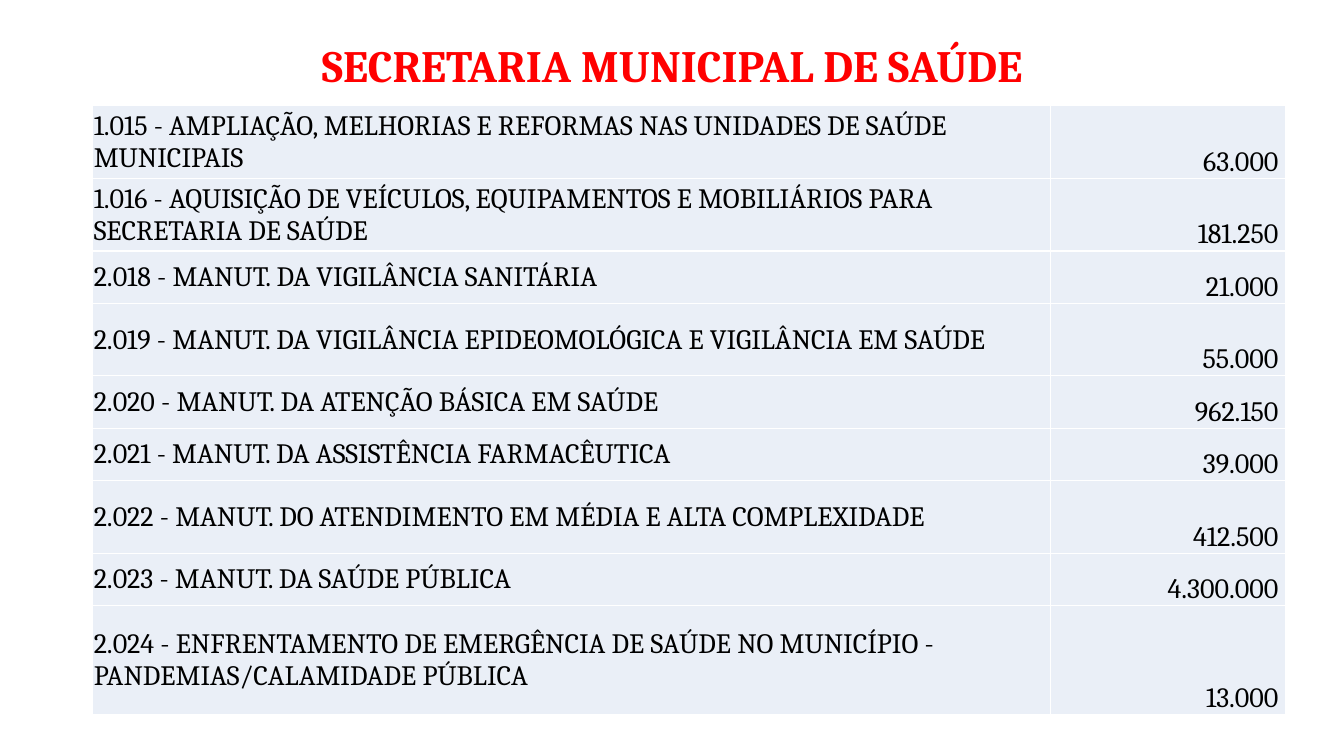
from dataclasses import dataclass

from lxml import etree
from pptx import Presentation
from pptx.dml.color import RGBColor
from pptx.enum.text import MSO_ANCHOR, PP_ALIGN
from pptx.oxml.ns import qn
from pptx.util import Inches, Pt

LEFT, CENTER, RIGHT = PP_ALIGN.LEFT, PP_ALIGN.CENTER, PP_ALIGN.RIGHT
MIDDLE, BOTTOM = MSO_ANCHOR.MIDDLE, MSO_ANCHOR.BOTTOM

TITLE = "SECRETARIA MUNICIPAL DE SAÚDE"
WIDTHS = (9.5, 2.33)
SHORT, TALL, LAST = 0.52, 0.72, 1.08
BUDGET = [
    ("1.015 - AMPLIAÇÃO, MELHORIAS E REFORMAS NAS UNIDADES DE SAÚDE MUNICIPAIS", "63.000", TALL),
    ("1.016 - AQUISIÇÃO DE VEÍCULOS, EQUIPAMENTOS E MOBILIÁRIOS PARA SECRETARIA DE SAÚDE", "181.250", TALL),
    ("2.018 - MANUT. DA VIGILÂNCIA SANITÁRIA", "21.000", SHORT),
    ("2.019 - MANUT. DA VIGILÂNCIA EPIDEOMOLÓGICA E VIGILÂNCIA EM SAÚDE", "55.000", TALL),
    ("2.020 - MANUT. DA ATENÇÃO BÁSICA EM SAÚDE", "962.150", SHORT),
    ("2.021 - MANUT. DA ASSISTÊNCIA FARMACÊUTICA", "39.000", SHORT),
    ("2.022 - MANUT. DO ATENDIMENTO EM MÉDIA E ALTA COMPLEXIDADE", "412.500", TALL),
    ("2.023 - MANUT. DA SAÚDE PÚBLICA", "4.300.000", SHORT),
    ("2.024 - ENFRENTAMENTO DE EMERGÊNCIA DE SAÚDE NO MUNICÍPIO - PANDEMIAS/CALAMIDADE PÚBLICA", "13.000", LAST),
]


@dataclass
class Theme:
    font: str = "Cambria"
    title: str = "FF0000"
    text: str = "000000"
    fill: str = "EAEFF7"
    rule: str = "FFFFFF"
    large: int = 32
    body: int = 20


class Deck:
    def __init__(self, theme, slide):
        self.theme = theme
        self.slide = slide

    def style(self, frame, size, color, align, bold=False):
        for para in frame.paragraphs:
            para.alignment = align
            for run in para.runs:
                run.font.name = self.theme.font
                run.font.size = Pt(size)
                run.font.bold = bold
                run.font.color.rgb = RGBColor.from_string(color)

    def title(self, text, left, top, width, height):
        box = self.slide.shapes.add_textbox(
            Inches(left), Inches(top), Inches(width), Inches(height))
        frame = box.text_frame
        frame.word_wrap = True
        frame.vertical_anchor = MIDDLE
        frame.text = text
        frame.paragraphs[0].line_spacing = 0.9
        self.style(frame, self.theme.large, self.theme.title, CENTER, True)

    def border(self, cell):
        props = cell._tc.get_or_add_tcPr()
        for side in ("lnL", "lnR", "lnT", "lnB"):
            line = etree.SubElement(props, qn(f"a:{side}"), w=str(Pt(1)))
            fill = etree.SubElement(line, qn("a:solidFill"))
            etree.SubElement(fill, qn("a:srgbClr"), val=self.theme.rule)

    def cell(self, cell, text, align, anchor, right):
        cell.text_frame.text = text
        cell.vertical_anchor = anchor
        cell.margin_left = cell.margin_top = Inches(0.01)
        cell.margin_right = Inches(right)
        cell.margin_bottom = 0
        self.border(cell)
        cell.fill.solid()
        cell.fill.fore_color.rgb = RGBColor.from_string(self.theme.fill)
        self.style(cell.text_frame, self.theme.body, self.theme.text, align)

    def table(self, rows, widths, left, top):
        height = sum(row[2] for row in rows)
        table = self.slide.shapes.add_table(
            len(rows), len(widths), Inches(left), Inches(top),
            Inches(sum(widths)), Inches(height)).table
        table.first_row = table.horz_banding = False
        for column, width in zip(table.columns, widths):
            column.width = Inches(width)
        for index, (label, value, height) in enumerate(rows):
            table.rows[index].height = Inches(height)
            self.cell(table.cell(index, 0), label, LEFT, MIDDLE, 0.01)
            self.cell(table.cell(index, 1), value, RIGHT, BOTTOM, 0.07)


def main():
    prs = Presentation()
    prs.slide_width, prs.slide_height = Inches(13.33), Inches(7.5)
    deck = Deck(Theme(), prs.slides.add_slide(prs.slide_layouts[6]))
    deck.title(TITLE, 0.92, 0.29, 11.5, 0.76)
    deck.table(BUDGET, WIDTHS, 0.92, 1.05)
    prs.save("out.pptx")


if __name__ == "__main__":
    main()
